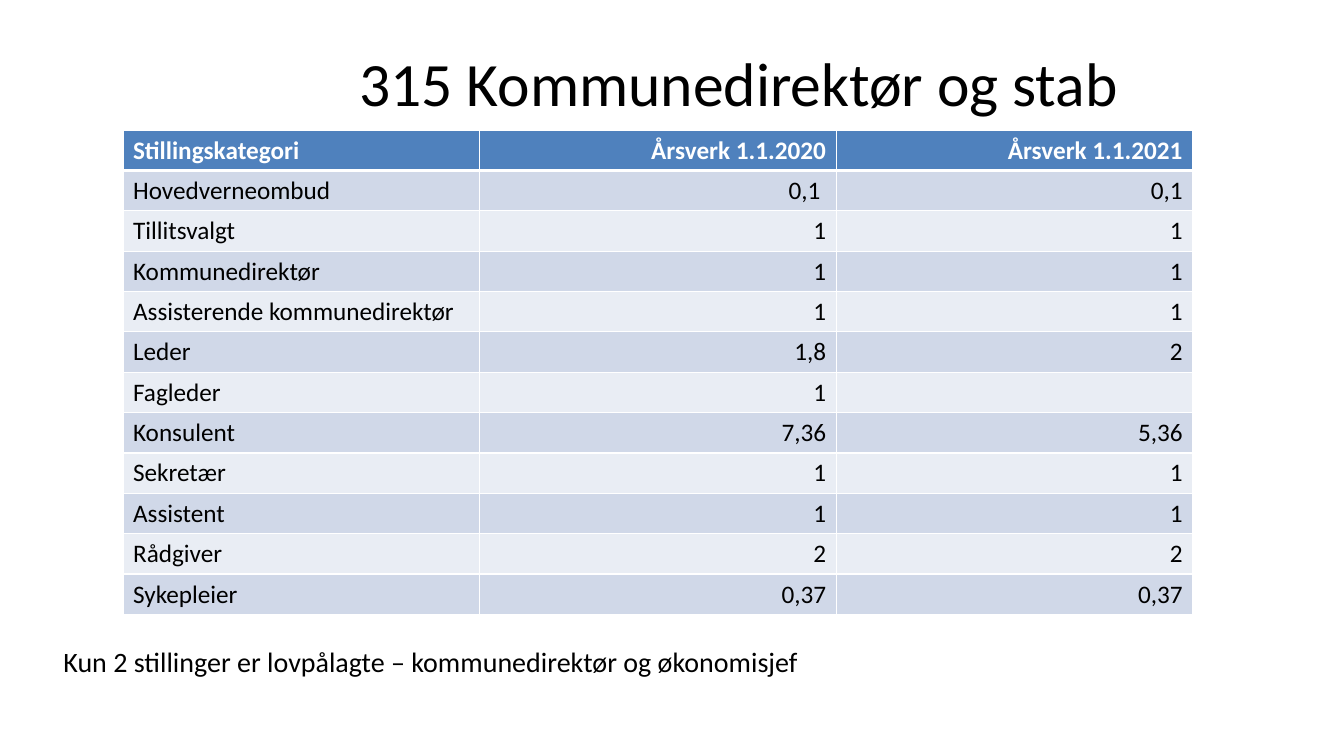
from lxml.etree import SubElement
from pptx import Presentation
from pptx.dml.color import RGBColor
from pptx.enum.text import MSO_ANCHOR, PP_ALIGN
from pptx.oxml.ns import qn
from pptx.util import Inches, Pt

BLACK = RGBColor(0x00, 0x00, 0x00)
WHITE = RGBColor(0xFF, 0xFF, 0xFF)
HEADER_BLUE = RGBColor(0x4F, 0x81, 0xBD)
BAND_DARK = RGBColor(0xD0, 0xD8, 0xE8)
BAND_LIGHT = RGBColor(0xE9, 0xED, 0xF4)

STAFFING = [
    ("Stillingskategori", "Årsverk 1.1.2020", "Årsverk 1.1.2021"),
    ("Hovedverneombud", "0,1 ", "0,1"),
    ("Tillitsvalgt", "1", "1"),
    ("Kommunedirektør", "1", "1"),
    ("Assisterende kommunedirektør", "1", "1"),
    ("Leder", "1,8", "2"),
    ("Fagleder", "1", ""),
    ("Konsulent", "7,36", "5,36"),
    ("Sekretær", "1", "1"),
    ("Assistent", "1", "1"),
    ("Rådgiver", "2", "2"),
    ("Sykepleier", "0,37", "0,37"),
]


class PageBuilder:
    def __init__(self, page, font="Calibri"):
        self.page = page
        self.font = font

    def add_span(self, frame, text, size, color=BLACK, bold=False, align=PP_ALIGN.LEFT):
        para = frame.paragraphs[0]
        para.alignment = align
        if text:
            span = para.add_run()
            span.text = text
            span.font.name = self.font
            span.font.size = Pt(size)
            span.font.bold = bold
            span.font.color.rgb = color

    def add_text(self, left, top, width, height, text, size,
                 align=PP_ALIGN.LEFT, anchor=MSO_ANCHOR.TOP):
        box = self.page.shapes.add_textbox(
            Inches(left), Inches(top), Inches(width), Inches(height))
        box.text_frame.word_wrap = True
        box.text_frame.vertical_anchor = anchor
        self.add_span(box.text_frame, text, size, align=align)

    def add_borders(self, cell, widths):
        properties = cell._tc.get_or_add_tcPr()
        # Border lines come before the fill in the cell properties
        for position, (side, width) in enumerate(widths.items()):
            line = SubElement(properties, qn(f"a:{side}"), w=str(Pt(width)))
            fill = SubElement(line, qn("a:solidFill"))
            SubElement(fill, qn("a:srgbClr"), val=str(WHITE))
            properties.insert(position, line)

    def add_grid(self, left, top, width, row_height, rows, size):
        columns = len(rows[0])
        table = self.page.shapes.add_table(
            len(rows), columns, Inches(left), Inches(top),
            Inches(width), Inches(row_height * len(rows))).table
        for r, values in enumerate(rows):
            header = r == 0
            band = HEADER_BLUE if header else BAND_DARK if r % 2 else BAND_LIGHT
            widths = {"lnL": 1, "lnR": 1, "lnT": 3 if r == 1 else 1,
                      "lnB": 3 if header else 1}
            for c, value in enumerate(values):
                cell = table.cell(r, c)
                cell.fill.solid()
                cell.fill.fore_color.rgb = band
                self.add_borders(cell, widths)
                self.add_span(cell.text_frame, value, size,
                              WHITE if header else BLACK, header,
                              PP_ALIGN.RIGHT if c else PP_ALIGN.LEFT)


def main():
    deck = Presentation()
    deck.slide_width, deck.slide_height = Inches(13.33), Inches(7.5)
    builder = PageBuilder(deck.slides.add_slide(deck.slide_layouts[6]))

    # Title
    builder.add_text(1.33, 0.19, 12, 1.25, "315 Kommunedirektør og stab", 44,
                     PP_ALIGN.CENTER, MSO_ANCHOR.MIDDLE)

    # Staffing table
    builder.add_grid(1.22, 1.29, 10.61, 0.4, STAFFING, 18)

    # Note below the table
    builder.add_text(0.53, 6.34, 12.31, 0.44,
                     "Kun 2 stillinger er lovpålagte – kommunedirektør og økonomisjef", 20)

    deck.save("out.pptx")


if __name__ == "__main__":
    main()
